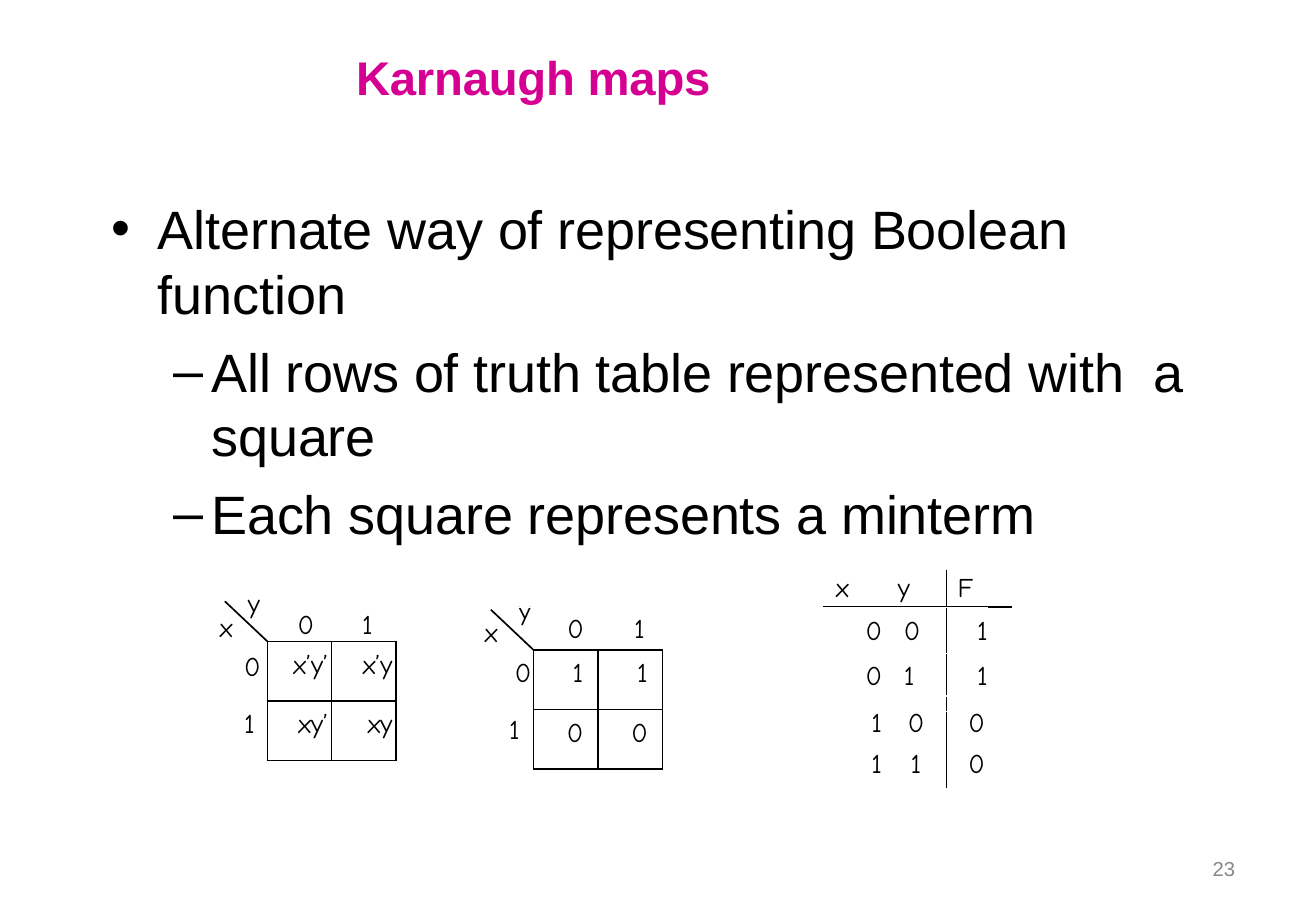
import pptx
import pptx.util
import pptx.dml.color
import pptx.enum.shapes
import pptx.enum.text
import pptx.oxml
import pptx.oxml.ns

Align = pptx.enum.text.PP_ALIGN
Anchor = pptx.enum.text.MSO_ANCHOR
LEFT, MID, RIGHT = Align.LEFT, Align.CENTER, Align.RIGHT
HAND = "Comic Neue"
BLACK = "000000"
CELL = 53, 49
# Row, column, text, alignment, top and left inset, line height in points
VALUES = [
    (0, 0, "x", LEFT, 9, 3, None),
    (0, 1, "y", MID, 0, 3, 11.8),
    (0, 2, "0", LEFT, 6, 23, None),
    (0, 3, "1", LEFT, 6, 25, None),
    (0, 4, "0", RIGHT, 7, 0, None),
    (0, 5, "0", LEFT, 7, 18, None),
    (0, 6, "1", RIGHT, 7, 0, None),
    (1, 1, "0", MID, 4, 0, None),
    (1, 4, "0", RIGHT, 6, 0, None),
    (1, 5, "1", LEFT, 6, 18, None),
    (1, 6, "1", RIGHT, 6, 0, None),
    (3, 0, "1", LEFT, 3, 23, None),
    (3, 4, "1\n1", RIGHT, 0, 0, 16.5),
    (3, 5, "0\n1", MID, 0, 0, 16.5),
    (3, 6, "0\n0", LEFT, 0, 15, 16.5),
]


def px(n):
    """Turn px into EMU, at 100 px to the inch."""
    return pptx.util.Emu(n * 9144)


def color(code):
    return pptx.dml.color.RGBColor.from_string(code)


def node(tag, **attrs):
    item = pptx.oxml.parse_xml(f"<a:{tag} {pptx.oxml.ns.nsdecls('a')}/>")
    for key, value in attrs.items():
        item.set(key, str(value))
    return item


def style(par, size=16, font=HAND, code=BLACK, bold=False, space=0):
    for run in par.runs:
        run.font.size = pptx.util.Pt(size)
        run.font.name = font
        run.font.bold = bold
        run.font.color.rgb = color(code)
        run.font._element.set("spc", str(space))


def strip(item, top=0):
    """Set the insets of a text frame or cell to zero, save for the top."""
    item.margin_left = item.margin_right = item.margin_bottom = 0
    item.margin_top = px(top)
    item.vertical_anchor = Anchor.TOP


def add_box(slide, x, y, w, h, top):
    shape = slide.shapes.add_textbox(px(x), px(y), px(w), px(h))
    frame = shape.text_frame
    strip(frame, top)
    frame.word_wrap = True
    return frame


def add_text(slide, lines, x, y, w, h, tabs=(), **look):
    """Add lines of text, each with its indent and the space before it."""
    frame = add_box(slide, x, y, w, h, 3)
    for i, (text, left, before) in enumerate(lines):
        par = frame.add_paragraph() if i else frame.paragraphs[0]
        par.text = text
        par.space_before = pptx.util.Pt(before)
        style(par, **look)
        props = par._p.get_or_add_pPr()
        props.set("marL", str(px(left)))
        if tabs:
            stops = node("tabLst")
            for stop in tabs:
                stops.append(node("tab", pos=px(stop), algn="l"))
            props.append(stops)


def add_line(slide, x1, y1, x2, y2):
    kind = pptx.enum.shapes.MSO_CONNECTOR.STRAIGHT
    line = slide.shapes.add_connector(kind, px(x1), px(y1), px(x2), px(y2))
    line.line.color.rgb = color(BLACK)
    line.line.width = pptx.util.Pt(1)
    line._element.spPr.append(node("effectLst"))


def add_title(slide, text):
    title = slide.shapes.title
    title.left, title.top = px(292), px(38)
    title.width, title.height = px(503), px(48)
    strip(title.text_frame, 2)
    title.text_frame.margin_left = px(1)
    par = title.text_frame.paragraphs[0]
    par.text = text
    par.alignment = LEFT
    style(par, 28, "Arial", "D50092", True, -10)


def add_list(slide, items):
    frame = add_box(slide, 91, 159, 908, 291, 2)
    marks = [("•", 39, -38), ("–", 83, -31)]
    for i, (level, text) in enumerate(items):
        par = frame.add_paragraph() if i else frame.paragraphs[0]
        par.text = text
        par.level = level
        par.space_before = pptx.util.Pt(7.7 if i else 0.9)
        style(par, 32, "Arial", space=-10)
        mark, left, hang = marks[level]
        props = par._p.get_or_add_pPr()
        props.set("marL", str(px(left)))
        props.set("indent", str(px(hang)))
        props.append(node("buFont", typeface="Arial"))
        props.append(node("buChar", char=mark))


def add_grid(slide, x, y, wides, highs):
    """Add an empty table without fills and return it."""
    table = slide.shapes.add_table(
        len(highs), len(wides), px(x), px(y),
        px(sum(wides)), px(sum(highs))).table
    table.first_row = table.horz_banding = False
    for col, wide in zip(table.columns, wides):
        col.width = px(wide)
    for row, high in zip(table.rows, highs):
        row.height = px(high)
    for cell in table.iter_cells():
        cell.fill.background()
        strip(cell)
    return table


def set_cell(cell, text, align, top, line=None):
    cell.margin_top = px(top)
    cell.text_frame.text = text
    for i, par in enumerate(cell.text_frame.paragraphs):
        par.alignment = align
        if line:
            par.line_spacing = pptx.util.Pt(line)
        if i:
            par.space_before = pptx.util.Pt(7.7)
        style(par)


def add_edges(cell):
    props = cell._tc.get_or_add_tcPr()
    for i, side in enumerate("LRTB"):
        edge = node("ln" + side, w=pptx.util.Pt(1))
        fill = node("solidFill")
        fill.append(node("srgbClr", val=BLACK))
        edge.append(fill)
        props.insert(i, edge)


def add_map(slide, texts, x, y, inset):
    """Add a two-by-two map with its corner at x, y."""
    wide, high = CELL
    table = add_grid(slide, x, y, [wide] * 2, [high] * 2)
    for cell, text in zip(table.iter_cells(), texts):
        set_cell(cell, text, RIGHT, 7)
        cell.margin_right = px(inset)
        add_edges(cell)
    add_line(slide, x, y, x - 35, y - 33)


def add_values(slide):
    """Add the labels of the second map and the rows of the truth table."""
    wides = [21, 22, 53, 53, 176, 56, 31]
    table = add_grid(slide, 396, 500, wides, [38, 35, 13, 63])
    for row in 2, 3:
        table.cell(row, 0).merge(table.cell(row, 1))
    for row, col, text, align, top, left, line in VALUES:
        cell = table.cell(row, col)
        set_cell(cell, text, align, top, line)
        cell.margin_left = px(left)
    for cell in table.iter_cells():
        if not cell.text_frame.text:
            par = cell.text_frame.paragraphs[0]
            par._p.append(node("endParaRPr", sz=400))


def main():
    deck = pptx.Presentation()
    deck.slide_width, deck.slide_height = px(1083), px(750)
    slide = deck.slides.add_slide(deck.slide_layouts[5])
    add_text(slide, [("x\ty\tF", 1, 0)], 687, 467, 125, 28, (51, 100))
    add_line(slide, 677, 500, 833, 500)
    add_line(slide, 779, 469, 779, 649)
    add_title(slide, "Karnaugh maps")
    add_list(slide, [
        (0, "Alternate way of representing Boolean  function"),
        (1, "All rows of truth table represented with  a square"),
        (1, "Each square represents a minterm"),
    ])
    add_values(slide)
    add_map(slide, "1100", 439, 535, 12)
    add_text(slide, [("0\t1", 1, 0)], 244, 497, 70, 28, (53,))
    add_text(slide, [("x", 1, 0)], 180, 500, 17, 28)
    labels = [("y", 4, 0), ("0", 1, 18.3), ("1", 1, 14.4)]
    add_text(slide, labels, 200, 480, 19, 128)
    add_map(slide, ["x’y’", "x’y", "xy’", "xy"], 220, 528, 3)
    add_text(slide, [("23", 1, 0)], 997, 702, 23, 22,
             size=12, font="Arial", code="888888")
    deck.save("out.pptx")


if __name__ == "__main__":
    main()
